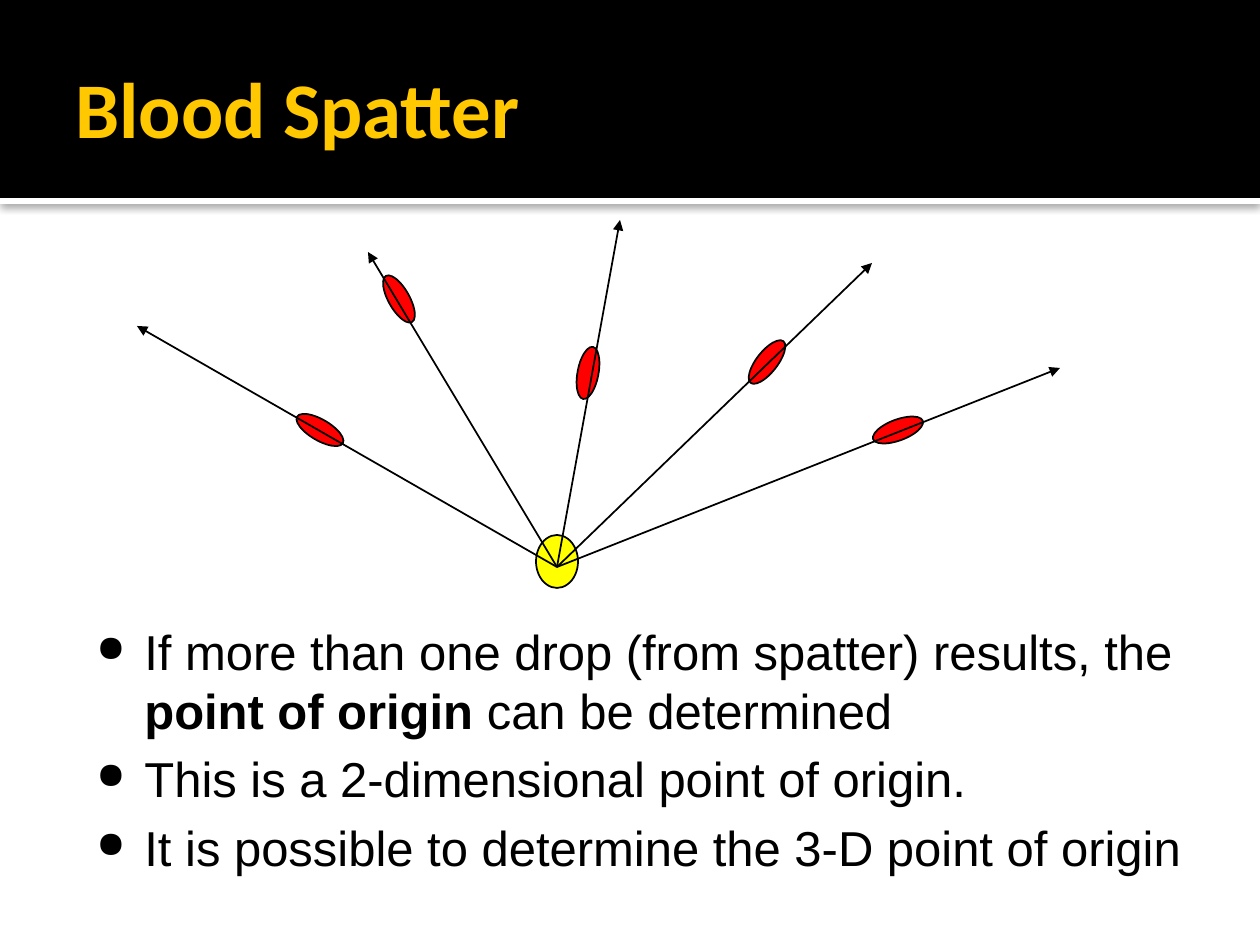
from lxml.etree import SubElement
from pptx import Presentation
from pptx.dml.color import RGBColor
from pptx.enum.shapes import MSO_CONNECTOR, MSO_SHAPE
from pptx.enum.text import MSO_ANCHOR
from pptx.oxml.ns import qn
from pptx.util import Emu, Pt

PX = 914400 / 126
SLIDE_W, SLIDE_H = 1260, 945
COLORS = {"black": "000000", "white": "FFFFFF", "title": "FFC800",
          "blood": "FF0000", "origin": "FFFF00"}

TITLE = "Blood Spatter"
# Each bullet is a list of (text, bold) runs
BULLETS = [
    [("If more than one drop (from spatter) results, the ", False),
     ("point of origin", True),
     (" can be determined", False)],
    [("This is a 2-dimensional point of origin.", False)],
    [("It is possible to determine the 3-D point of origin", False)],
]
ORIGIN = (557, 567)
# Drop centre, drop rotation in degrees, arrow tip
TRAJECTORIES = [
    ((320, 430), 300.2, (137, 326)),
    ((399, 299), 330.6, (368, 252)),
    ((588, 373), 10.6, (620, 220)),
    ((767, 362), 218.1, (872, 263)),
    ((898, 430), 249.6, (1060, 368)),
]
DROP_W, DROP_H = 21, 53
HEADER_H, STRIP_H = 198, 6


def px(value):
    return Emu(round(value * PX))


def rgb(name):
    return RGBColor.from_string(COLORS[name])


def add_filled(shapes, kind, box, fill, outlined=False):
    shape = shapes.add_shape(kind, *map(px, box))
    shape.shadow.inherit = False
    shape.fill.solid()
    shape.fill.fore_color.rgb = rgb(fill)
    if outlined:
        shape.line.color.rgb = rgb("black")
        shape.line.width = Pt(1)
    else:
        shape.line.fill.background()
    return shape


def add_text_area(shapes, box):
    area = shapes.add_textbox(*map(px, box))
    area.text_frame.word_wrap = True
    return area.text_frame


def add_run(paragraph, text, font, size, color, bold):
    run = paragraph.add_run()
    run.text = text
    run.font.name = font
    run.font.size = Pt(size)
    run.font.bold = bold
    run.font.color.rgb = rgb(color)


def add_strip_shadow(strip):
    effects = strip._element.spPr.find(qn("a:effectLst"))
    shadow = SubElement(effects, qn("a:outerShdw"), blurRad=str(Pt(5)),
                        dist=str(Pt(0.8)), dir="5400000", rotWithShape="0")
    color = SubElement(shadow, qn("a:srgbClr"), val=COLORS["black"])
    SubElement(color, qn("a:alpha"), val="60000")


def set_bullet(paragraph):
    props = paragraph._p.get_or_add_pPr()
    props.set("marL", str(px(48)))
    props.set("indent", str(px(-48)))
    color = SubElement(props, qn("a:buClr"))
    SubElement(color, qn("a:srgbClr"), val=COLORS["black"])
    SubElement(props, qn("a:buSzPct"), val="75000")
    SubElement(props, qn("a:buChar"), char="●")


def add_trajectory(shapes, tip):
    arrow = shapes.add_connector(MSO_CONNECTOR.STRAIGHT, *map(px, ORIGIN + tip))
    arrow.line.color.rgb = rgb("black")
    arrow.line.width = Pt(1)
    SubElement(arrow.line._get_or_add_ln(), qn("a:tailEnd"), type="triangle")
    SubElement(arrow._element.spPr, qn("a:effectLst"))


def main():
    prs = Presentation()
    prs.slide_width, prs.slide_height = px(SLIDE_W), px(SLIDE_H)
    shapes = prs.slides.add_slide(prs.slide_layouts[6]).shapes

    strip = add_filled(shapes, MSO_SHAPE.RECTANGLE,
                       (0, HEADER_H, SLIDE_W, STRIP_H), "white")
    add_strip_shadow(strip)
    add_filled(shapes, MSO_SHAPE.RECTANGLE, (0, 0, SLIDE_W, HEADER_H), "black")

    title = add_text_area(shapes, (63, 21, 1134, 173))
    title.vertical_anchor = MSO_ANCHOR.MIDDLE
    add_run(title.paragraphs[0], TITLE, "Calibri", 45, "title", True)

    body = add_text_area(shapes, (84, 615, 1113, 246))
    for i, runs in enumerate(BULLETS):
        paragraph = body.add_paragraph() if i else body.paragraphs[0]
        set_bullet(paragraph)
        if i:
            paragraph.space_before = Pt(5.6)
        for text, bold in runs:
            add_run(paragraph, text, "Arial", 28, "black", bold)

    for (x, y), rotation, _ in TRAJECTORIES:
        drop = add_filled(shapes, MSO_SHAPE.OVAL,
                          (x - DROP_W / 2, y - DROP_H / 2, DROP_W, DROP_H),
                          "blood", outlined=True)
        drop.rotation = rotation
    add_filled(shapes, MSO_SHAPE.OVAL, (536, 535, 42, 53), "origin", outlined=True)
    for _, _, tip in TRAJECTORIES:
        add_trajectory(shapes, tip)

    prs.save("out.pptx")


if __name__ == "__main__":
    main()
